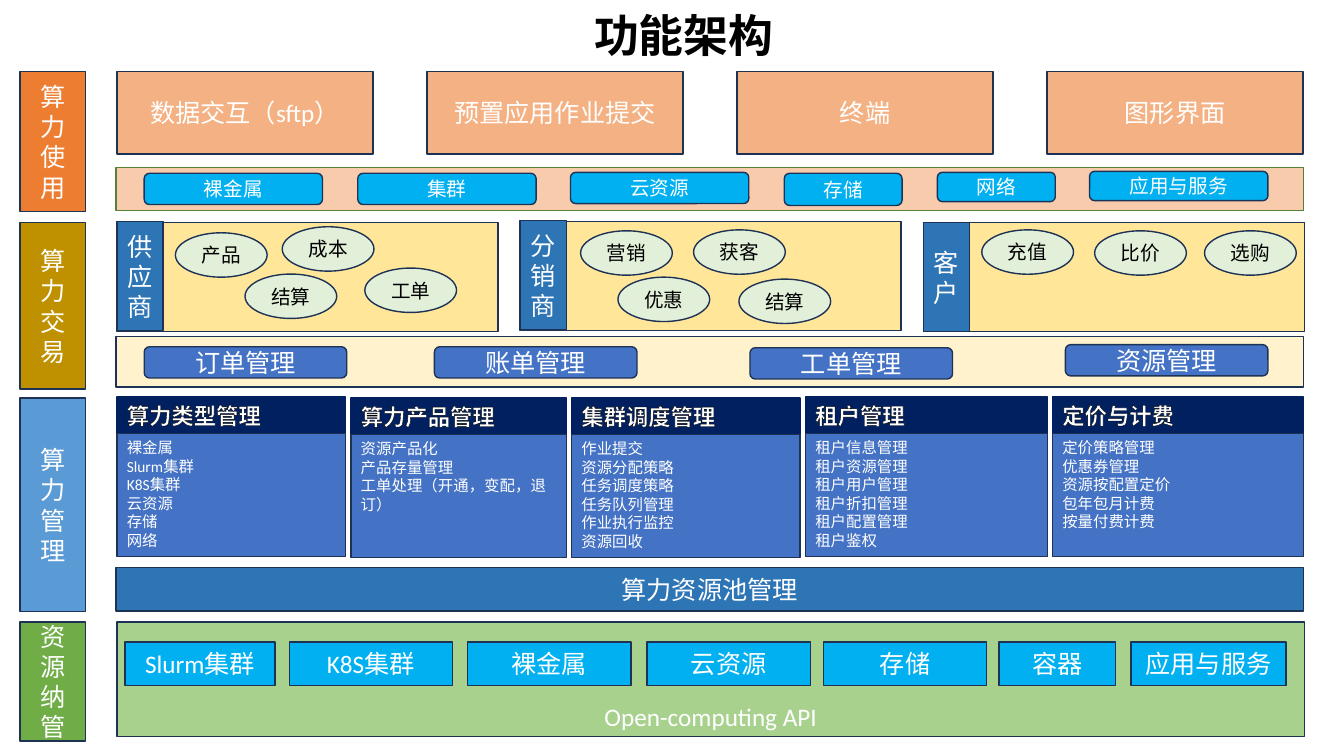
from lxml import etree
from pptx import Presentation
from pptx.dml.color import RGBColor
from pptx.enum.shapes import MSO_SHAPE
from pptx.enum.text import MSO_ANCHOR, MSO_AUTO_SIZE, PP_ALIGN
from pptx.oxml.ns import qn
from pptx.util import Pt

RECT, ROUND, OVAL = MSO_SHAPE.RECTANGLE, MSO_SHAPE.ROUNDED_RECTANGLE, MSO_SHAPE.OVAL
TOP, MID, LOW = MSO_ANCHOR.TOP, MSO_ANCHOR.MIDDLE, MSO_ANCHOR.BOTTOM
LEFT, MIDST = PP_ALIGN.LEFT, PP_ALIGN.CENTER
FIT = MSO_AUTO_SIZE.SHAPE_TO_FIT_TEXT
NAVY, WHITE, BLACK, EDGE = "002060", "FFFFFF", "000000", "1E3256"
STEEL, BLUE, CYAN, PEACH = "2E75B6", "4472C4", "00B0F0", "F4B183"


def color(code):
    return RGBColor.from_string(code)


class Board:
    font = "Calibri"

    def __init__(self, slide):
        self.slide = slide

    def label(self, frame, text, size, ink, align, bold=False):
        frame.word_wrap = True
        frame.text = text
        for para in frame.paragraphs:
            para.alignment = align
            para.font.name = self.font
            para.font.size = Pt(size)
            para.font.bold = bold
            para.font.color.rgb = color(ink)

    def title(self, box, text):
        frame = self.slide.shapes.add_textbox(*map(Pt, box)).text_frame
        self.label(frame, text, 32, BLACK, MIDST, True)
        frame.auto_size = FIT

    def block(self, box, fill, text="", size=18, kind=RECT, ink=WHITE,
              edge=EDGE, anchor=MID, align=MIDST, bold=False):
        shape = self.slide.shapes.add_shape(kind, *map(Pt, box))
        shape.shadow.inherit = False
        shape.fill.solid()
        shape.fill.fore_color.rgb = color(fill)
        shape.line.color.rgb = color(edge)
        shape.line.width = Pt(1)
        frame = shape.text_frame
        frame.vertical_anchor = anchor
        if text:
            self.label(frame, text, size, ink, align, bold)
        return shape

    def outline(self, run):
        line = etree.Element(qn("a:ln"), w="9525")
        fill = etree.SubElement(line, qn("a:solidFill"))
        etree.SubElement(fill, qn("a:srgbClr"), val=BLACK)
        run._r.get_or_add_rPr().insert(0, line)

    def module(self, left, top, width, head, items):
        bar = self.block((left, top, width, 25.9), NAVY, head, 16,
                         edge=NAVY, align=LEFT, bold=True)
        self.outline(bar.text_frame.paragraphs[0].runs[0])
        self.block((left, top + 25.9, width, 87.8), BLUE, "\n".join(items), 11,
                   anchor=TOP, align=LEFT)

    def party(self, left, top, tag, tagtop, ovals):
        self.block((left, top, 272.2, 77.8), "FFE699")
        self.block((left, tagtop, 33.1, 77.8), STEEL, tag)
        for text, x, y in ovals:
            self.block((x, y, 65.5, 31.7), "E2F0D9", text, 14, OVAL, BLACK)


SIDES = [
    ("算力使用", 51.1, 100.1, "ED7D31"),
    ("算力交易", 159.1, 118.8, "BF9000"),
    ("算力管理", 284.4, 152.6, "5B9BD5"),
    ("资源纳管", 444.2, 85, "70AD47"),
]
ENTRIES = ["数据交互（sftp）", "预置应用作业提交", "终端", "图形界面"]
GOODS = [
    ("裸金属", 103, 123.8, 127.4, 22.3),
    ("集群", 255.6, 123.8, 127.4, 22.3),
    ("云资源", 407.5, 123.1, 127.4, 22.3),
    ("存储", 560.2, 123.8, 84.2, 23),
    ("网络", 669.6, 123.1, 84.2, 20.9),
    ("应用与服务", 778.3, 122.4, 127.4, 20.9),
]
PARTIES = [
    ("供应商", 159.1, 158.4, [("产品", 125.3, 166.3), ("成本", 201.6, 162),
                           ("结算", 175, 195.8), ("工单", 260.6, 191.5)]),
    ("分销商", 158.4, 157.7, [("营销", 414.7, 164.9), ("获客", 495.4, 164.2),
                           ("优惠", 441.4, 198), ("结算", 527.8, 199.4)]),
    ("客户", 159.1, 159.1, [("充值", 701.3, 164.2), ("比价", 781.9, 164.9),
                          ("选购", 860.4, 164.9)]),
]
DESKS = [("订单管理", 103, 247.7), ("账单管理", 310.3, 247.7),
         ("工单管理", 535.7, 248.4), ("资源管理", 761, 246.2)]
MODULES = [
    (83.5, 283.7, 163.4, "算力类型管理",
     ["裸金属", "Slurm集群", "K8S集群", "云资源", "存储", "网络"]),
    (250.6, 284.4, 154.1, "算力产品管理",
     ["资源产品化", "产品存量管理", "工单处理（开通，变配，退订）"]),
    (408.2, 284.4, 163.4, "集群调度管理",
     ["作业提交", "资源分配策略", "任务调度策略", "任务队列管理", "作业执行监控", "资源回收"]),
    (575.3, 283.7, 172.8, "租户管理",
     ["租户信息管理", "租户资源管理", "租户用户管理", "租户折扣管理", "租户配置管理", "租户鉴权"]),
    (751.7, 283.7, 179.3, "定价与计费",
     ["定价策略管理", "优惠券管理", "资源按配置定价", "包年包月计费", "按量付费计费"]),
]
POOLS = [
    ("Slurm集群", 89.3, 107.3), ("K8S集群", 206.6, 116.6), ("裸金属", 334.1, 116.6),
    ("云资源", 462.2, 116.6), ("存储", 588.2, 116.6), ("容器", 713.5, 83.5),
    ("应用与服务", 807.8, 110.9),
]


def main():
    deck = Presentation()
    deck.slide_width, deck.slide_height = Pt(960), Pt(540)
    board = Board(deck.slides.add_slide(deck.slide_layouts[6]))

    board.title((318.2, 2.2, 340.6, 46.1), "功能架构")
    for text, top, height, fill in SIDES:
        board.block((14.4, top, 46.8, height), fill, text)

    for i, text in enumerate(ENTRIES):
        board.block((83.5 + 221.5 * i, 51.1, 182.9, 59), PEACH, text)
    board.block((82.8, 119.5, 848.2, 31), "F8CBAD", edge="548235")
    for text, *box in GOODS:
        board.block(box, CYAN, text, 14, ROUND)

    for i, (tag, top, tagtop, ovals) in enumerate(PARTIES):
        board.party(83.5 + 288 * i, top, tag, tagtop, ovals)
    board.block((82.8, 240.5, 848.2, 36), "FFF2CC")
    for text, left, top in DESKS:
        board.block((left, top, 144.7, 22.3), BLUE, text, kind=ROUND)

    for module in MODULES:
        board.module(*module)
    board.block((82.8, 405.4, 848.2, 31), STEEL, "算力资源池管理")

    board.block((83.5, 444.2, 848.2, 82.1), "A9D18E", "Open-computing API", anchor=LOW)
    for text, left, width in POOLS:
        board.block((left, 458.6, width, 31), CYAN, text)

    deck.save("out.pptx")


if __name__ == "__main__":
    main()
